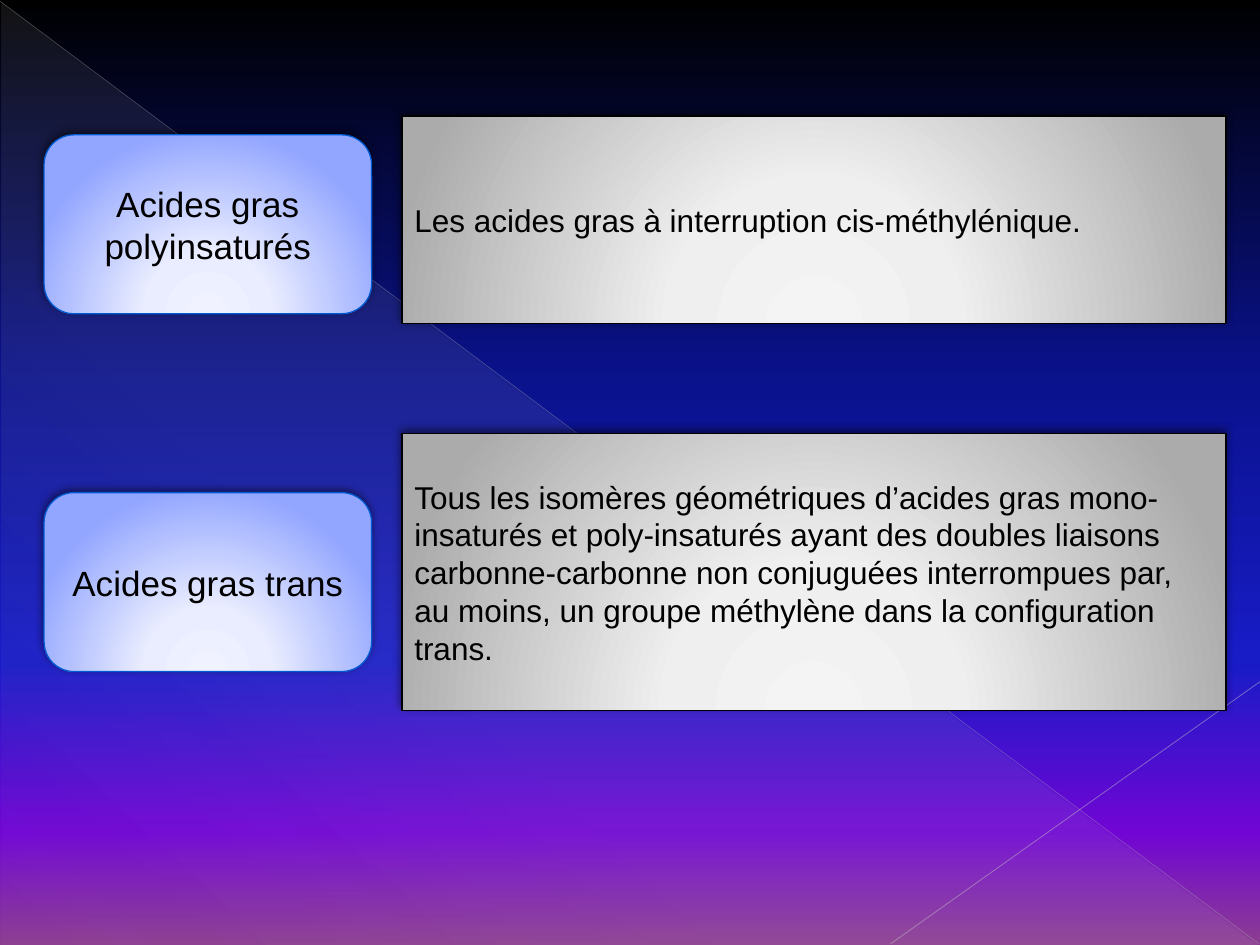
from pptx import Presentation
from pptx import util as u
from pptx.dml.color import RGBColor
from pptx.enum import shapes, text
from pptx.oxml import parse_xml
from pptx.oxml.ns import nsdecls, qn

BLACK = RGBColor(0, 0, 0)
BLUE = RGBColor(0x00, 0x5B, 0xD3)
PALE = RGBColor(0xD2, 0xD2, 0xD2)
SILVER = RGBColor(0xBF, 0xBF, 0xBF)
LIGHT = RGBColor(0xC6, 0xC6, 0xC6)
NIGHT = [(0, BLACK, 100), (40, RGBColor(0x0A, 0x12, 0x8C), 100),
         (70, RGBColor(0x18, 0x1C, 0xC7), 100),
         (88, RGBColor(0x70, 0x05, 0xD4), 100),
         (100, RGBColor(0x8C, 0x3D, 0x91), 100)]
VEIL = [(0, PALE, 10), (70, PALE, 8), (100, PALE, 1)]
LILAC = [(0, RGBColor(0xF0, 0xF2, 0xFF), 100),
         (34, RGBColor(0xEA, 0xED, 0xFF), 100),
         (100, RGBColor(0x92, 0xA5, 0xFF), 100)]
GREY = [(0, RGBColor(0xF4, 0xF4, 0xF4), 100),
        (34, RGBColor(0xEF, 0xEF, 0xEF), 100),
        (100, RGBColor(0xAB, 0xAB, 0xAB), 100)]
GLOW = ('<a:path path="circle"><a:fillToRect l="50000" t="155000" '
        'r="50000" b="-55000"/></a:path>')
SHADOW = (f'<a:effectLst {nsdecls("a")}><a:outerShdw blurRad="{u.Pt(5)}" '
          f'dist="{u.Pt(2)}" dir="{245 * 60000}" rotWithShape="0">'
          '<a:srgbClr val="000000"><a:alpha val="50000"/></a:srgbClr>'
          '</a:outerShdw></a:effectLst>')


def paint(fill, parent, stops, shade):
    fill.gradient()
    old = next(parent.iter(qn("a:gradFill")))
    gs = "".join(f'<a:gs pos="{pos * 1000}"><a:srgbClr val="{color}">'
                 f'<a:alpha val="{alpha * 1000}"/></a:srgbClr></a:gs>'
                 for pos, color, alpha in stops)
    new = parse_xml(f'<a:gradFill {nsdecls("a")} rotWithShape="1">'
                    f'<a:gsLst>{gs}</a:gsLst>{shade}</a:gradFill>')
    old.getparent().replace(old, new)


def linear(angle):
    return f'<a:lin ang="{angle * 60000}" scaled="0"/>'


prs = Presentation()
prs.slide_width, prs.slide_height = u.Inches(10), u.Inches(7.5)
s = prs.slides.add_slide(prs.slide_layouts[6])
paint(s.background.fill, s._element, NIGHT, linear(90))

sp = s.shapes.add_shape(shapes.MSO_SHAPE.RIGHT_TRIANGLE,
                        *map(u.Inches, (0.01, 0.02, 9.98, 7.48)))
sp.shadow.inherit = False
sp.line.fill.background()
paint(sp.fill, sp._element.spPr, VEIL, linear(133))

for ends, color, width, alpha in [
        ((0, 0.01, 9.99, 7.49), SILVER, 0.39, 35),
        ((10, 5.41, 7.07, 7.49), LIGHT, 0.47, 45)]:
    cx = s.shapes.add_connector(shapes.MSO_CONNECTOR.STRAIGHT,
                                *map(u.Inches, ends))
    cx.line.color.rgb, cx.line.width = color, u.Pt(width)
    clr = next(cx._element.spPr.iter(qn("a:srgbClr")))
    clr.append(parse_xml(f'<a:alpha {nsdecls("a")} val="{alpha * 1000}"/>'))
    cx._element.spPr.append(parse_xml(f'<a:effectLst {nsdecls("a")}/>'))

TERM = dict(kind=shapes.MSO_SHAPE.ROUNDED_RECTANGLE, left=0.35, width=2.6,
            stops=LILAC, line=BLUE, size=20, align=text.PP_ALIGN.CENTER)
DEFINITION = dict(kind=shapes.MSO_SHAPE.RECTANGLE, left=3.19, width=6.54,
                  stops=GREY, line=BLACK, size=18, align=text.PP_ALIGN.LEFT)
boxes = [
    (TERM, 1.07, 1.42, "Acides gras polyinsaturés"),
    (DEFINITION, 0.92, 1.65,
     "Les acides gras à interruption cis-méthylénique."),
    (DEFINITION, 3.44, 2.2,
     "Tous les isomères géométriques d’acides gras mono-insaturés et "
     "poly-insaturés ayant des doubles liaisons carbonne-carbonne non "
     "conjuguées interrompues par, au moins, un groupe méthylène dans la "
     "configuration trans."),
    (TERM, 3.91, 1.42, "Acides gras trans"),
]
for look, top, height, words in boxes:
    sp = s.shapes.add_shape(look["kind"], *map(
        u.Inches, (look["left"], top, look["width"], height)))
    paint(sp.fill, sp._element.spPr, look["stops"], GLOW)
    sp.line.color.rgb, sp.line.width = look["line"], u.Pt(0.75)
    sp._element.spPr.append(parse_xml(SHADOW))
    tf = sp.text_frame
    tf.word_wrap, tf.vertical_anchor = True, text.MSO_ANCHOR.MIDDLE
    p = tf.paragraphs[0]
    p.alignment = look["align"]
    r = p.add_run()
    r.text = words
    for key, value in dict(name="Arial", size=u.Pt(look["size"])).items():
        setattr(r.font, key, value)
    r.font.color.rgb = BLACK

prs.save("out.pptx")
